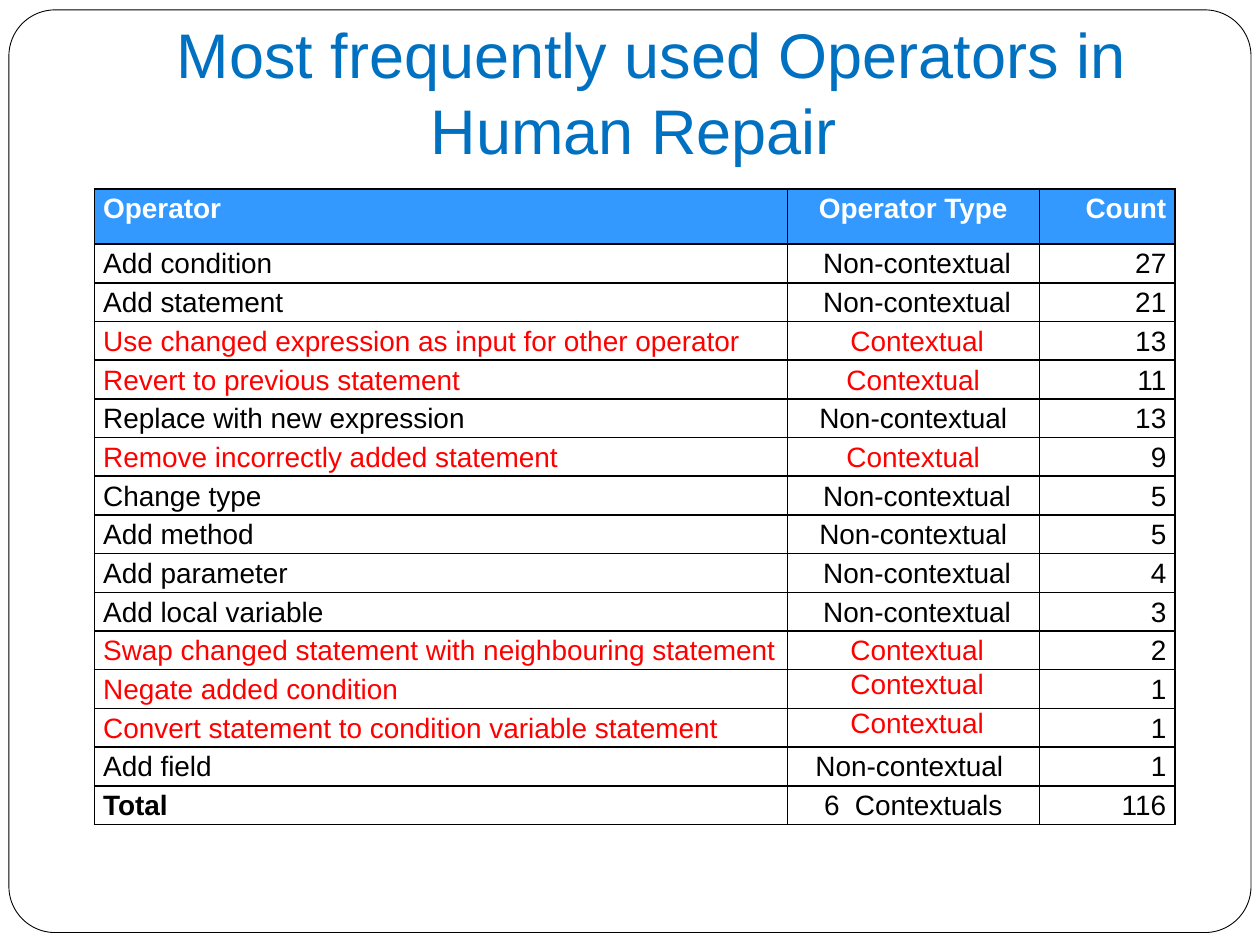
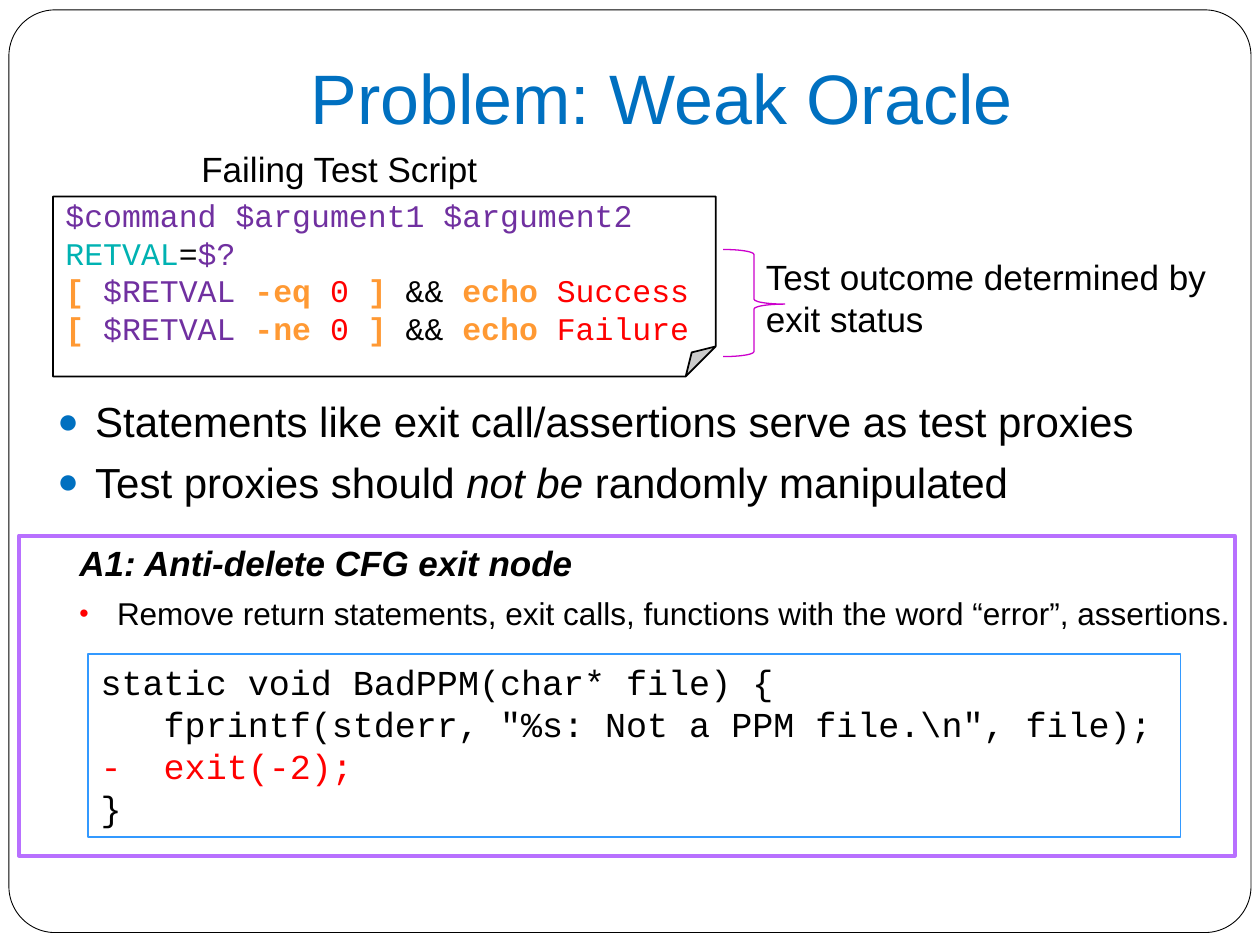
from lxml.etree import SubElement
from pptx import Presentation
from pptx.dml.color import RGBColor
from pptx.enum.shapes import MSO_SHAPE
from pptx.enum.text import MSO_ANCHOR, PP_ALIGN
from pptx.oxml.ns import qn
from pptx.util import Cm, Pt

BLACK = RGBColor(0, 0, 0)
WHITE = RGBColor(0xFF, 0xFF, 0xFF)
RED = RGBColor(0xFF, 0, 0)
TITLE_BLUE = RGBColor(0x00, 0x70, 0xC0)
HEADER_BLUE = RGBColor(0x33, 0x99, 0xFF)
PURPLE = RGBColor(0x70, 0x30, 0xA0)
TEAL = RGBColor(0x00, 0xB2, 0xB2)
ORANGE = RGBColor(0xFF, 0x99, 0x33)
MAGENTA = RGBColor(0xCC, 0x00, 0xCC)
LILAC = RGBColor(0xB8, 0x70, 0xFF)

SANS, MONO = "Arial", "Courier New"
PARAGRAPH_GAP = 5.8

CONTEXTUAL, NON_CONTEXTUAL = "Contextual", "Non-contextual"
HEADERS = ("Operator", " Operator Type ", "Count")
OPERATORS = [
    ("Add condition", " " + NON_CONTEXTUAL, 27),
    ("Add statement", " " + NON_CONTEXTUAL, 21),
    ("Use changed expression as input for other operator", " " + CONTEXTUAL, 13),
    ("Revert to previous statement", CONTEXTUAL, 11),
    ("Replace with new expression", NON_CONTEXTUAL, 13),
    ("Remove incorrectly added statement", CONTEXTUAL, 9),
    ("Change type", " " + NON_CONTEXTUAL, 5),
    ("Add method", NON_CONTEXTUAL, 5),
    ("Add parameter", " " + NON_CONTEXTUAL, 4),
    ("Add local variable", " " + NON_CONTEXTUAL, 3),
    ("Swap changed statement with neighbouring statement", " " + CONTEXTUAL, 2),
    ("Negate added condition", " " + CONTEXTUAL, 1),
    ("Convert statement to condition variable statement", " " + CONTEXTUAL, 1),
    ("Add field", NON_CONTEXTUAL + " ", 1),
    ("Total", "6  Contextuals", 116),
]
SINGLE_SPACED = ("Negate added condition",
                 "Convert statement to condition variable statement")


def write(frame, runs, size=20, font=SANS, color=BLACK, bold=False, italic=False,
          align=PP_ALIGN.LEFT, spacing=None, before=0, bullet=None, bullet_color=None):
    """Add one paragraph; runs is a string or a list of (text, overrides)."""
    paragraph = frame.paragraphs[0]
    if paragraph.runs:
        paragraph = frame.add_paragraph()
    paragraph.alignment = align
    paragraph.line_spacing = spacing or Pt(1.2 * size)
    paragraph.space_before = Pt(before)
    if bullet:
        add_bullet(paragraph, bullet, bullet_color)
    for text, changes in [(runs, {})] if isinstance(runs, str) else runs:
        style = {"color": color, "bold": bold, "italic": italic, **changes}
        run = paragraph.add_run()
        run.text = text
        run.font.name, run.font.size = font, Pt(size)
        run.font.color.rgb = style["color"]
        run.font.bold, run.font.italic = style["bold"], style["italic"]


def add_bullet(paragraph, mark, color):
    properties = paragraph._p.get_or_add_pPr()
    properties.set("marL", str(Cm(0.76)))
    properties.set("indent", str(-Cm(0.76)))
    mark_color = SubElement(properties, qn("a:buClr"))
    SubElement(mark_color, qn("a:srgbClr"), val=str(color))
    SubElement(properties, qn("a:buSzPct"), val="85000")
    SubElement(properties, qn("a:buFont"), typeface=SANS)
    SubElement(properties, qn("a:buChar"), char=mark)


def add_frame(slide, left, top, width, height, wrap=True):
    frame = slide.shapes.add_textbox(Cm(left), Cm(top), Cm(width), Cm(height)).text_frame
    frame.word_wrap = wrap
    return frame


def add_outline(slide, kind, left, top, width, height, line, weight,
                fill=None, adjustments=()):
    shape = slide.shapes.add_shape(kind, Cm(left), Cm(top), Cm(width), Cm(height))
    shape.shadow.inherit = False
    if fill is None:
        shape.fill.background()
    else:
        shape.fill.solid()
        shape.fill.fore_color.rgb = fill
    shape.line.color.rgb = line
    shape.line.width = Pt(weight)
    for index, value in enumerate(adjustments):
        shape.adjustments[index] = value
    shape.text_frame.word_wrap = True
    return shape


def start_slide(deck, title, left, top, size):
    """Blank slide with the rounded page border and the shared title style."""
    slide = deck.slides.add_slide(deck.slide_layouts[6])
    add_outline(slide, MSO_SHAPE.ROUNDED_RECTANGLE, 0.18, 0.2, 25.04, 18.6,
                BLACK, 0.5, WHITE, [0.05])
    frame = add_frame(slide, left, top, 21.59, 3.18)
    frame.vertical_anchor = MSO_ANCHOR.BOTTOM
    frame.margin_bottom = Cm(0.25)
    write(frame, title, size=size, color=TITLE_BLUE, align=PP_ALIGN.CENTER)
    return slide


def style_cell(cell, fill):
    cell.margin_left = cell.margin_right = Cm(0.18)
    cell.margin_top = cell.margin_bottom = 0
    properties = cell._tc.get_or_add_tcPr()
    for side in ("lnL", "lnR", "lnT", "lnB"):
        border = SubElement(properties, qn("a:" + side), w=str(Pt(1)))
        border_fill = SubElement(border, qn("a:solidFill"))
        SubElement(border_fill, qn("a:srgbClr"), val=str(BLACK))
    cell.fill.solid()
    cell.fill.fore_color.rgb = fill


def operator_table(slide, left, top, column_widths, header_height, row_height):
    rows = [HEADERS, *OPERATORS]
    height = header_height + row_height * len(OPERATORS)
    table = slide.shapes.add_table(len(rows), len(HEADERS), Cm(left), Cm(top),
                                   Cm(sum(column_widths)), Cm(height)).table
    for column, width in zip(table.columns, column_widths):
        column.width = Cm(width)
    alignments = (PP_ALIGN.LEFT, PP_ALIGN.CENTER, PP_ALIGN.RIGHT)
    for r, values in enumerate(rows):
        is_header = r == 0
        table.rows[r].height = Cm(header_height if is_header else row_height)
        for c, value in enumerate(values):
            cell = table.cell(r, c)
            style_cell(cell, HEADER_BLUE if is_header else WHITE)
            # Contextual operators are red, their counts stay black
            is_red = values[1].strip() == CONTEXTUAL and c < 2
            color = WHITE if is_header else RED if is_red else BLACK
            is_single = c == 1 and values[0] in SINGLE_SPACED
            write(cell.text_frame, str(value), size=16, color=color,
                  bold=is_header or value == "Total", align=alignments[c],
                  spacing=1.0 if is_single else 1.15)


def test_script(slide, left, top, width, height):
    """Folded note with the shell script, its caption and the braced remark."""
    note = add_outline(slide, MSO_SHAPE.FOLDED_CORNER, left, top, width, height,
                       BLACK, 1, WHITE).text_frame
    note.vertical_anchor = MSO_ANCHOR.MIDDLE
    variable, literal = {"color": PURPLE}, {"color": RED}
    keyword = {"color": ORANGE, "bold": True}
    lines = [[("$command $argument1 $argument2", variable)],
             [("RETVAL", {"color": TEAL}), ("=", {}), ("$?", variable)]]
    for test, outcome in (("-eq ", "Success"), ("-ne ", "Failure")):
        lines.append([("[ ", keyword), ("$RETVAL ", variable), (test, keyword),
                      ("0 ", literal), ("]", keyword), (" && ", {}),
                      ("echo ", keyword), (outcome, literal)])
    for line in lines:
        write(note, line, size=18, font=MONO)

    caption = add_frame(slide, left + 2.74, top - 1.12, 6.12, 1.02, wrap=False)
    write(caption, "Failing Test Script")
    right = left + width
    remark = add_frame(slide, right + 0.76, top + 1.07, 9.7, 1.96)
    write(remark, "Test outcome determined by exit status")
    add_outline(slide, MSO_SHAPE.RIGHT_BRACE, right + 0.15, top + 1.07, 1.24, 2.16,
                MAGENTA, 0.75, adjustments=[0.08, 0.51])


def proxy_points(slide, left, top, width, height):
    frame = add_frame(slide, left, top, width, height)
    points = [
        "Statements like exit call/assertions serve as test proxies",
        [("Test proxies should ", {}), ("not be ", {"italic": True}),
         ("randomly manipulated", {})],
    ]
    for index, point in enumerate(points):
        write(frame, point, size=24, before=PARAGRAPH_GAP if index else 0,
              bullet="●", bullet_color=TITLE_BLUE)


def anti_delete_rule(slide, left, top, width, height):
    """Lilac panel with the rule, its explanation and a code example."""
    rule = add_frame(slide, left + 0.97, top, width - 0.63, 2.2)
    write(rule, "A1: Anti-delete CFG exit node", bold=True, italic=True)
    write(rule, "Remove return statements, exit calls, functions with the word "
                "“error”, assertions.",
          size=18, before=PARAGRAPH_GAP, bullet="•", bullet_color=RED)

    code = add_outline(slide, MSO_SHAPE.RECTANGLE, left + 1.4, top + 2.39, 22.02, 3.68,
                       HEADER_BLUE, 1, WHITE).text_frame
    code.vertical_anchor = MSO_ANCHOR.TOP
    for line in ("static void BadPPM(char* file) {",
                 '   fprintf(stderr, "%s: Not a PPM file.\\n", file);',
                 "-  exit(-2);",
                 "}"):
        write(code, line, font=MONO, color=RED if line.startswith("-") else BLACK)
    add_outline(slide, MSO_SHAPE.RECTANGLE, left, top, width, height, LILAC, 2.25)


def main():
    deck = Presentation()
    deck.slide_width, deck.slide_height = Cm(25.4), Cm(19.05)

    # Operator counts
    slide = start_slide(deck, " Most frequently used Operators in Human Repair ",
                        2.16, 0.43, 36)
    operator_table(slide, 1.9, 3.81, (13.97, 5.08, 2.74), 1.11, 0.78)

    # Weak oracle
    slide = start_slide(deck, "Problem: Weak Oracle", 2.54, -0.13, 40)
    proxy_points(slide, 0.91, 7.85, 24.23, 2.7)
    test_script(slide, 1.07, 3.96, 13.36, 3.63)
    anti_delete_rule(slide, 0.38, 10.8, 24.51, 6.45)

    deck.save("out.pptx")


if __name__ == "__main__":
    main()
